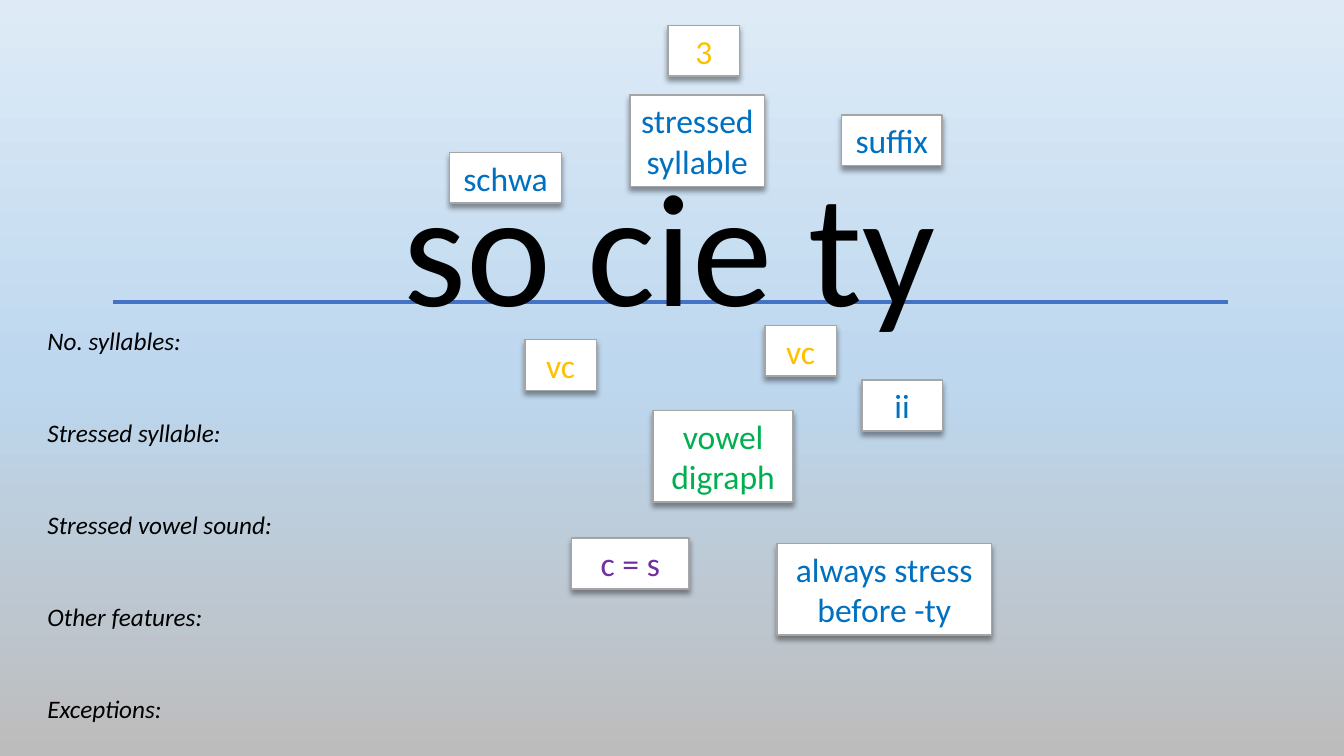
import copy
import dataclasses

import lxml.etree
import pptx
import pptx.dml.color
import pptx.enum.shapes
import pptx.enum.text
import pptx.oxml.ns
import pptx.util

Cm = pptx.util.Cm
Pt = pptx.util.Pt
qn = pptx.oxml.ns.qn
Align = pptx.enum.text.PP_ALIGN
Anchor = pptx.enum.text.MSO_ANCHOR


@dataclasses.dataclass(frozen=True)
class Theme:
    font: str = "Calibri"
    word_size: int = 115
    label_size: int = 24
    prompt_size: int = 18
    black: str = "000000"
    white: str = "FFFFFF"
    border: str = "A5A5A5"
    rule: str = "4472C4"
    blue: str = "0070C0"
    green: str = "00B050"
    gold: str = "FFC000"
    purple: str = "7030A0"
    background: tuple = ((0, "DEEBF7"), (0.5, "BDD7EE"), (1, "BDBCBC"))


theme = Theme()


def rgb(value):
    return pptx.dml.color.RGBColor.from_string(value)


def write(shape, text, size, color, align=Align.CENTER, anchor=Anchor.TOP,
          italic=False, space_after=0):
    """Fill a shape with one paragraph per line of text."""
    frame = shape.text_frame
    frame.text = text
    frame.word_wrap = True
    frame.auto_size = pptx.enum.text.MSO_AUTO_SIZE.NONE
    frame.vertical_anchor = anchor
    for paragraph in frame.paragraphs:
        paragraph.alignment = align
        paragraph.line_spacing = 1.0
        paragraph.space_before = Pt(0)
        paragraph.space_after = Pt(space_after)
        font = paragraph.runs[0].font
        font.name = theme.font
        font.size = Pt(size)
        font.italic = italic
        font.color.rgb = rgb(color)


presentation = pptx.Presentation()
presentation.slide_width = Cm(33.87)
presentation.slide_height = Cm(19.05)
slide = presentation.slides.add_slide(presentation.slide_layouts[1])

# Background gradient, top to bottom
background = slide.background.fill
background.gradient()
background.gradient_angle = 270
stop_list = slide.element.find(".//" + qn("a:gsLst"))
stop_list.append(copy.deepcopy(stop_list[-1]))
for stop, (position, color) in zip(background.gradient_stops, theme.background):
    stop.position = position
    stop.color.rgb = rgb(color)

# The word, split into syllables
word = slide.shapes.title
word.left, word.top, word.width, word.height = Cm(4.37), Cm(3.53), Cm(25), Cm(5.18)
write(word, "so cie ty", theme.word_size, theme.black)

# Rule behind the word
rule = slide.shapes.add_connector(
    pptx.enum.shapes.MSO_CONNECTOR.STRAIGHT, Cm(2.84), Cm(7.61), Cm(30.94), Cm(7.61))
rule.line.color.rgb = rgb(theme.rule)
rule.line.width = Pt(3)
lxml.etree.SubElement(rule.element.spPr, qn("a:effectLst"))
word.element.addprevious(rule.element)

# Prompts on the left
prompts = slide.placeholders[1]
prompts.left, prompts.top, prompts.width, prompts.height = Cm(0.94), Cm(8.08), Cm(6.25), Cm(10.26)
write(prompts,
      "No. syllables:\nStressed syllable:\nStressed vowel sound:\nOther features:\nExceptions:",
      theme.prompt_size, theme.black, align=Align.LEFT, italic=True, space_after=44)
for paragraph in prompts.text_frame.paragraphs:
    properties = paragraph._p.get_or_add_pPr()
    properties.set("marL", "0")
    properties.set("indent", "0")
    lxml.etree.SubElement(properties, qn("a:buNone"))

# Labels around the word: text, colour, left, top, width, height
one_line, two_lines = 1.28, 2.31
labels = [
    ("stressed\nsyllable", theme.blue, 15.88, 2.39, 3.39, two_lines),
    ("vowel\ndigraph", theme.green, 16.46, 10.34, 3.53, two_lines),
    ("3", theme.gold, 16.84, 0.64, 1.8, one_line),
    ("vc", theme.gold, 13.23, 8.56, 1.8, one_line),
    ("vc", theme.gold, 19.28, 8.2, 1.8, one_line),
    ("ii", theme.blue, 21.72, 9.58, 2.03, one_line),
    ("suffix", theme.blue, 21.21, 2.9, 2.53, one_line),
    ("schwa", theme.blue, 11.33, 3.84, 2.82, one_line),
    ("c = s", theme.purple, 14.4, 13.56, 2.97, one_line),
    ("always stress before -ty", theme.blue, 19.58, 13.69, 5.41, two_lines),
]
for text, color, left, top, width, height in labels:
    label = slide.shapes.add_shape(
        pptx.enum.shapes.MSO_SHAPE.RECTANGLE, Cm(left), Cm(top), Cm(width), Cm(height))
    label.fill.solid()
    label.fill.fore_color.rgb = rgb(theme.white)
    label.line.color.rgb = rgb(theme.border)
    label.line.width = Pt(1)
    write(label, text, theme.label_size, color, anchor=Anchor.MIDDLE)

    # Soft shadow straight below
    label.shadow.inherit = False
    shadow = lxml.etree.SubElement(
        label.element.spPr.find(qn("a:effectLst")), qn("a:outerShdw"),
        blurRad=str(Pt(4)), dist=str(Pt(3)), dir="5400000", rotWithShape="0")
    shade = lxml.etree.SubElement(shadow, qn("a:srgbClr"), val=theme.black)
    lxml.etree.SubElement(shade, qn("a:alpha"), val="40000")

presentation.save("out.pptx")
